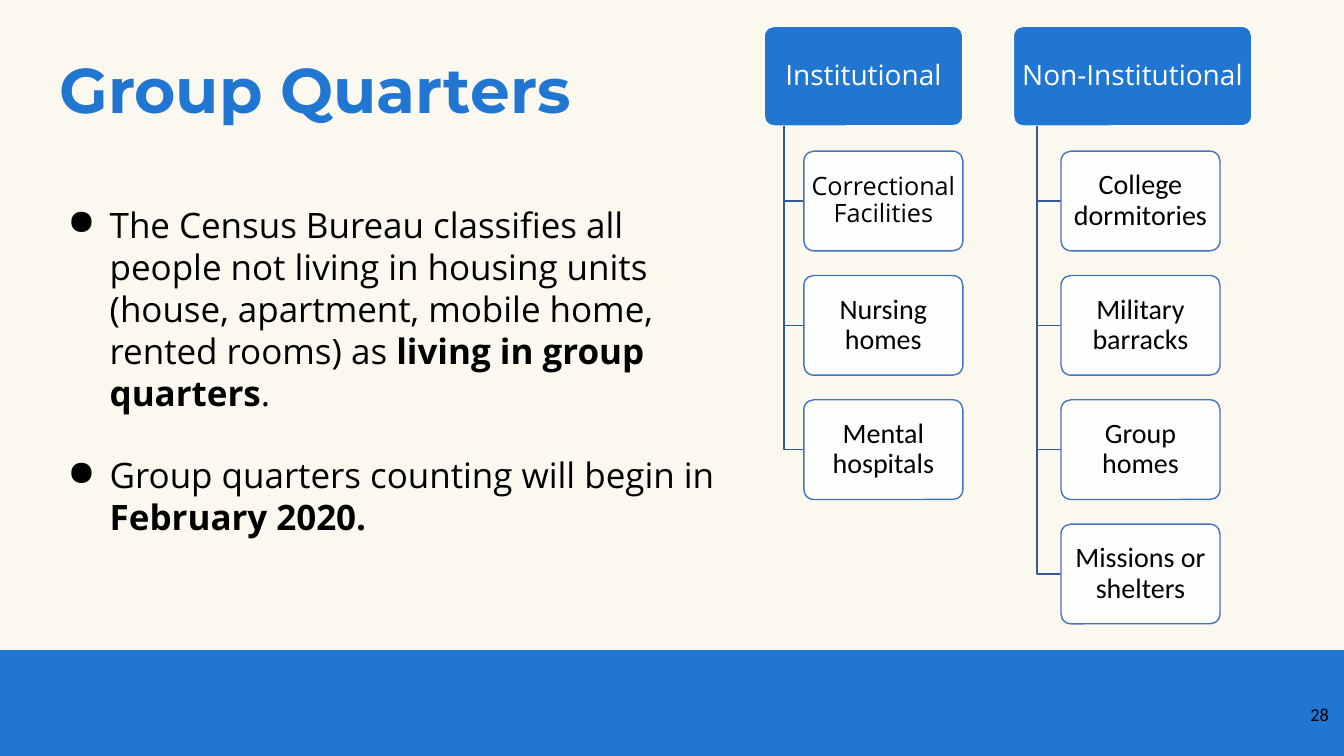
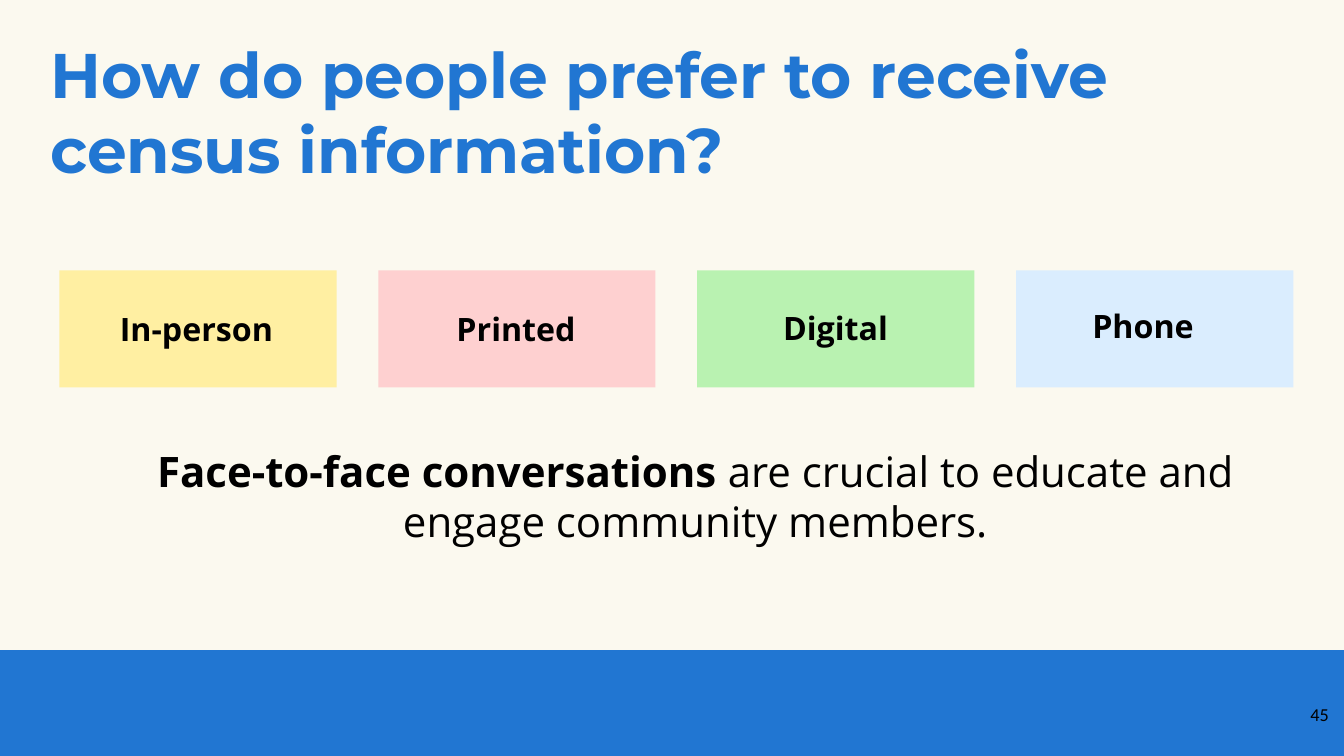
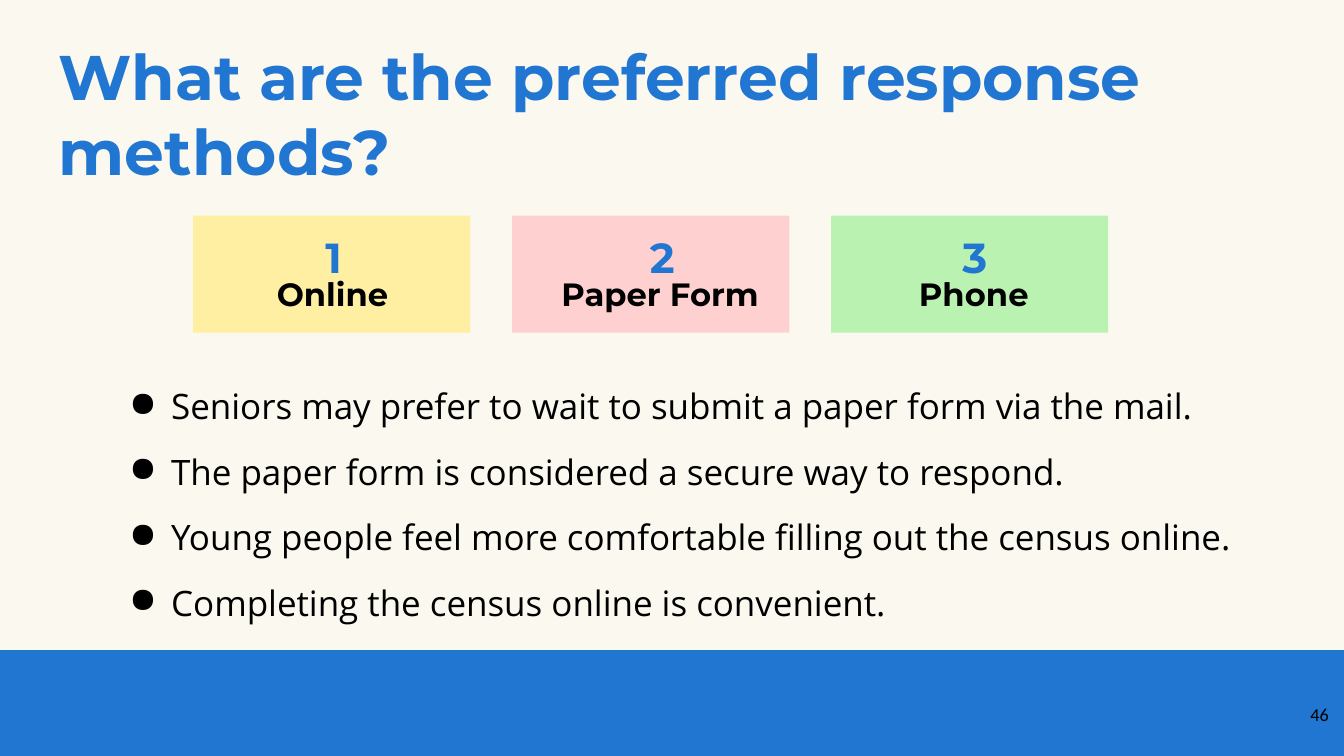
from dataclasses import dataclass

from lxml import etree
from pptx import Presentation
from pptx.dml.color import RGBColor
from pptx.enum import shapes, text
from pptx.oxml import ns
from pptx.util import Pt

CREAM = RGBColor(0xFB, 0xF9, 0xEF)
BLUE = RGBColor(0x21, 0x76, 0xD2)
STEM_BLUE = RGBColor(0x34, 0x5A, 0x99)
CARD_BLUE = RGBColor(0x43, 0x72, 0xC3)
WHITE = RGBColor(0xFF, 0xFF, 0xFF)
BLACK = RGBColor(0, 0, 0)
YELLOW = RGBColor(0xFF, 0xEF, 0xA2)
PINK = RGBColor(0xFE, 0xD0, 0xD0)
GREEN = RGBColor(0xB9, 0xF2, 0xB1)
PALE_BLUE = RGBColor(0xDA, 0xED, 0xFE)

SLIDE_WIDTH, SLIDE_HEIGHT = 960, 540
BAND_TOP = 464.4
CARD_TOP, CARD_HEIGHT, CARD_WIDTH = 18.8, 71.2, 113.6
FIRST_CHILD_TOP, CHILD_STEP = 108, 88.8
TILE_WIDTH, TILE_HEIGHT, TILE_STEP = 198, 83.6, 227.8
LABEL_WIDTH, LABEL_HEIGHT = 256.4, 46


@dataclass(frozen=True)
class Style:
    font: str
    size: float
    color: RGBColor = BLACK
    bold: bool = False


TITLE = Style("Montserrat", 45, BLUE, True)
NUMBER = Style("Montserrat", 30, BLUE, True)
BODY = Style("Open Sans", 25)
STATEMENT = Style("Open Sans", 30)
HEADER = Style("Open Sans", 20, WHITE)
CARD = Style("Calibri", 20)
CARD_SMALL = Style("Open Sans", 18)
TILE_LABEL = Style("Open Sans", 23, BLACK, True)
METHOD_LABEL = Style("Montserrat", 23, BLACK, True)
PAGE_NUMBER = Style("Calibri", 13)


@dataclass(frozen=True)
class Span:
    words: str
    bold: bool = False


@dataclass(frozen=True)
class Child:
    label: str
    style: Style = CARD


@dataclass(frozen=True)
class Branch:
    label: str
    left: float
    width: float
    children: tuple[Child, ...]


@dataclass(frozen=True)
class Tile:
    label: str
    fill: RGBColor
    label_left: float
    label_top: float
    number_left: float = 0


BRANCHES = (
    Branch("Institutional", 545.8, 142, (
        Child("Correctional Facilities", CARD_SMALL),
        Child("Nursing homes"),
        Child("Mental hospitals"),
    )),
    Branch("Non-Institutional", 723.8, 170.4, (
        Child("College dormitories"),
        Child("Military barracks"),
        Child("Group homes"),
        Child("Missions or shelters"),
    )),
)
CHANNELS = (
    Tile("In-person", YELLOW, 12.2, 217.4),
    Tile("Printed", PINK, 240.5, 217.4),
    Tile("Digital", GREEN, 468.7, 217),
    Tile("Phone", PALE_BLUE, 688.3, 215.6),
)
METHODS = (
    Tile("Online", YELLOW, 109.4, 192.2, 225.4),
    Tile("Paper Form", PINK, 343.4, 192.2, 457.2),
    Tile("Phone", GREEN, 567.4, 192.2, 680.4),
)
QUARTERS_NOTES = (
    (
        Span("The Census Bureau classifies all people not living in housing units "
             "(house, apartment, mobile home, rented rooms) as "),
        Span("living in group quarters", True),
        Span("."),
    ),
    (Span("Group quarters counting will begin in "), Span("February 2020.", True)),
)
RESPONSE_NOTES = (
    (Span("Seniors may prefer to wait to submit a paper form via the mail."),),
    (Span("The paper form is considered a secure way to respond."),),
    (Span("Young people feel more comfortable filling out the census online."),),
    (Span("Completing the census online is convenient."),),
)


def add_span(para, words: str, style: Style, bold: bool = False) -> None:
    span = para.add_run()
    span.text = words
    span.font.name = style.font
    span.font.size = Pt(style.size)
    span.font.color.rgb = style.color
    span.font.bold = style.bold or bold


def prepare_frame(box, anchor=text.MSO_ANCHOR.TOP, side: float = 7.2, edge: float = 3.6):
    frame = box.text_frame
    frame.word_wrap = True
    frame.auto_size = text.MSO_AUTO_SIZE.NONE
    frame.vertical_anchor = anchor
    frame.margin_left = frame.margin_right = Pt(side)
    frame.margin_top = frame.margin_bottom = Pt(edge)
    return frame


def add_text(page, left: float, top: float, width: float, height: float,
             spans: tuple[Span, ...], style: Style, align=text.PP_ALIGN.CENTER) -> None:
    box = page.shapes.add_textbox(Pt(left), Pt(top), Pt(width), Pt(height))
    para = prepare_frame(box).paragraphs[0]
    para.alignment = align
    for span in spans:
        add_span(para, span.words, style, span.bold)


def add_bullets(page, left: float, top: float, width: float, height: float,
                items: tuple[tuple[Span, ...], ...], gap: float) -> None:
    box = page.shapes.add_textbox(Pt(left), Pt(top), Pt(width), Pt(height))
    frame = prepare_frame(box)
    for index, spans in enumerate(items):
        para = frame.add_paragraph() if index else frame.paragraphs[0]
        properties = para._p.get_or_add_pPr()
        properties.set("marL", str(Pt(36)))
        properties.set("indent", str(Pt(-30)))
        color = etree.SubElement(properties, ns.qn("a:buClr"))
        etree.SubElement(color, ns.qn("a:srgbClr"), val=str(BLACK))
        etree.SubElement(properties, ns.qn("a:buChar"), char="●")
        if index:
            para.space_before = Pt(gap)
        for span in spans:
            add_span(para, span.words, BODY, span.bold)


def add_block(page, kind, left: float, top: float, width: float, height: float,
              fill: RGBColor, line: RGBColor | None = None):
    box = page.shapes.add_shape(kind, Pt(left), Pt(top), Pt(width), Pt(height))
    box.shadow.inherit = False
    box.fill.solid()
    box.fill.fore_color.rgb = fill
    if line is None:
        box.line.fill.background()
    else:
        box.line.color.rgb = line
        box.line.width = Pt(1)
    return box


def add_card(page, left: float, top: float, width: float, label: str, style: Style,
             fill: RGBColor, line: RGBColor):
    box = add_block(page, shapes.MSO_SHAPE.ROUNDED_RECTANGLE,
                    left, top, width, CARD_HEIGHT, fill, line)
    box.adjustments[0] = 0.1
    para = prepare_frame(box, text.MSO_ANCHOR.MIDDLE, 2.8, 2).paragraphs[0]
    para.alignment = text.PP_ALIGN.CENTER
    para.line_spacing = 0.9
    add_span(para, label, style)
    return box


def add_stem(page, left: float, top: float, right: float, bottom: float) -> None:
    builder = page.shapes.build_freeform(Pt(left), Pt(top))
    builder.add_line_segments(
        [(Pt(left), Pt(bottom)), (Pt(right), Pt(bottom))], close=False)
    stem = builder.convert_to_shape()
    stem.shadow.inherit = False
    stem.fill.background()
    stem.line.color.rgb = STEM_BLUE
    stem.line.width = Pt(1)


def add_branch(page, branch: Branch) -> None:
    add_card(page, branch.left, CARD_TOP, branch.width, branch.label, HEADER, BLUE, WHITE)
    stem_left = branch.left + branch.width * 0.1
    child_left = branch.left + branch.width * 0.2
    for index, child in enumerate(branch.children):
        top = FIRST_CHILD_TOP + index * CHILD_STEP
        add_stem(page, stem_left, CARD_TOP + CARD_HEIGHT, child_left, top + CARD_HEIGHT / 2)
        card = add_card(page, child_left, top, CARD_WIDTH, child.label, child.style,
                        WHITE, CARD_BLUE)
        color = card.fill._xPr.find(ns.qn("a:solidFill"))[0]
        etree.SubElement(color, ns.qn("a:alpha"), val="89000")


def add_tiles(page, left: float, top: float, tiles: tuple[Tile, ...], style: Style) -> None:
    for index, tile in enumerate(tiles):
        add_block(page, shapes.MSO_SHAPE.RECTANGLE, left + index * TILE_STEP, top,
                  TILE_WIDTH, TILE_HEIGHT, tile.fill)
    for tile in tiles:
        add_text(page, tile.label_left, tile.label_top, LABEL_WIDTH, LABEL_HEIGHT,
                 (Span(tile.label),), style)


def add_page(deck, title: str, left: float, top: float, width: float, height: float,
             number: str):
    page = deck.slides.add_slide(deck.slide_layouts[5])
    box = page.shapes.title
    box.left, box.top, box.width, box.height = Pt(left), Pt(top), Pt(width), Pt(height)
    para = prepare_frame(box).paragraphs[0]
    para.alignment = text.PP_ALIGN.LEFT
    add_span(para, title, TITLE)
    add_text(page, 898.6, 499, 57.6, 41, (Span(number),), PAGE_NUMBER, text.PP_ALIGN.RIGHT)
    return page


def build_quarters(deck):
    page = add_page(deck, "Group Quarters", 35.3, 32.4, 741.6, 62, "28")
    for branch in BRANCHES:
        add_branch(page, branch)
    add_bullets(page, 35.3, 141.8, 482.4, 309, QUARTERS_NOTES, 28.8)
    return page


def build_channels(deck) -> None:
    page = add_page(deck, "How do people prefer to receive census information?",
                    28.8, 21.6, 902, 118, "45")
    add_tiles(page, 42.4, 193.2, CHANNELS, TILE_LABEL)
    add_text(page, 95.8, 314.6, 802, 100, (
        Span("Face-to-face conversations ", True),
        Span("are crucial to educate and engage community members."),
    ), STATEMENT)


def build_methods(deck) -> None:
    page = add_page(deck, "What are the preferred response methods?",
                    34.6, 23, 902, 118, "46")
    add_tiles(page, 138, 154, METHODS, METHOD_LABEL)
    for number, tile in enumerate(METHODS, 1):
        add_text(page, tile.number_left, 161.8, 37.4, 44, (Span(str(number)),),
                 NUMBER, text.PP_ALIGN.LEFT)
    add_bullets(page, 79.2, 271.4, 837.4, 190, RESPONSE_NOTES, 16.8)


def move_band_to_layout(deck, page) -> None:
    band = add_block(page, shapes.MSO_SHAPE.RECTANGLE, 0, BAND_TOP, SLIDE_WIDTH,
                     SLIDE_HEIGHT - BAND_TOP, BLUE)
    deck.slide_layouts[5].shapes.element.insert(2, band.element)


def main() -> None:
    deck = Presentation()
    deck.slide_width, deck.slide_height = Pt(SLIDE_WIDTH), Pt(SLIDE_HEIGHT)
    background = deck.slide_master.background.fill
    background.solid()
    background.fore_color.rgb = CREAM
    first_page = build_quarters(deck)
    move_band_to_layout(deck, first_page)
    build_channels(deck)
    build_methods(deck)
    deck.save("out.pptx")


if __name__ == "__main__":
    main()
